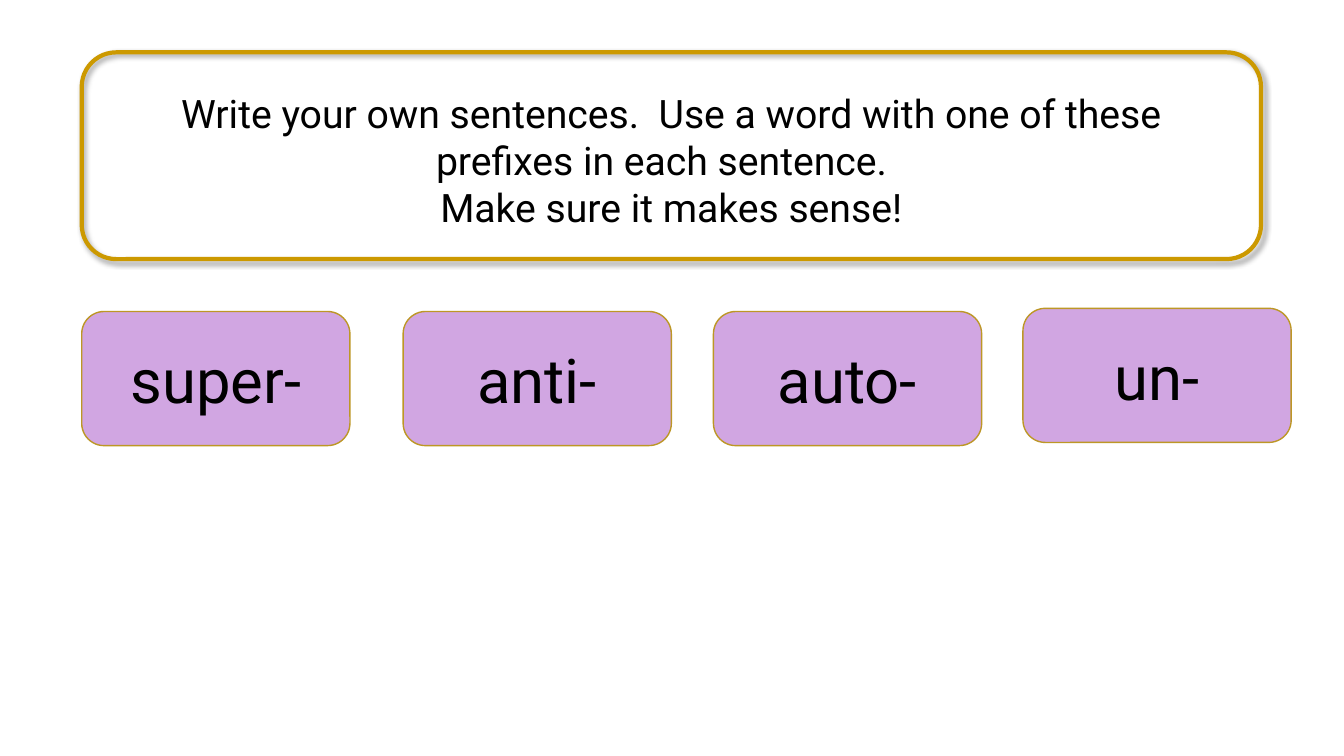
from lxml import etree
from pptx import Presentation
from pptx.dml.color import RGBColor
from pptx.enum import shapes, text
from pptx.util import Cm, Pt

NS = "http://schemas.openxmlformats.org/drawingml/2006/main"


def paint(color, code):
    color.rgb = RGBColor.from_string(code)


def write(frame, lines, size, anchor):
    form = {"word_wrap": True, "auto_size": text.MSO_AUTO_SIZE.NONE,
            "vertical_anchor": anchor}
    for name, value in form.items():
        setattr(frame, name, value)
    frame.text = "\n".join(lines)
    for para in frame.paragraphs:
        para.alignment = text.PP_ALIGN.CENTER
        for name, value in {"name": "Roboto", "size": Pt(size)}.items():
            setattr(para.font, name, value)
        paint(para.font.color, "000000")


deck = Presentation()
deck.slide_width, deck.slide_height = Cm(33.87), Cm(19.05)
slide = deck.slides.add_slide(deck.slide_layouts[5])
box = shapes.MSO_SHAPE.ROUNDED_RECTANGLE

# Instruction in its gold frame
title = slide.shapes.title
place = {"left": 2.64, "top": 2.13, "width": 28.55, "height": 3.84}
for name, value in place.items():
    setattr(title, name, Cm(value))
write(title.text_frame, [
    "Write your own sentences.  Use a word with one of these prefixes in each sentence.  ",
    "Make sure it makes sense!",
], 28, text.MSO_ANCHOR.TOP)

frame = slide.shapes.add_shape(box, Cm(2.06), Cm(1.32), Cm(29.72), Cm(5.21))
frame.fill.background()
paint(frame.line.color, "CC9900")
frame.line.width = Pt(3)
frame.shadow.inherit = False
effects = frame._element.spPr.find(f"{{{NS}}}effectLst")
effects.append(etree.fromstring(
    f'<a:outerShdw xmlns:a="{NS}" blurRad="{Pt(4)}" dist="{Pt(3)}" dir="2700000" '
    'algn="tl" rotWithShape="0"><a:srgbClr val="000000"><a:alpha val="40000"/>'
    '</a:srgbClr></a:outerShdw>'))

# Prefix cards
cards = [("super-", 2.06, 7.85), ("anti-", 10.16, 7.85),
         ("auto-", 17.98, 7.85), ("un-", 25.78, 7.77)]
for prefix, left, top in cards:
    card = slide.shapes.add_shape(box, Cm(left), Cm(top), Cm(6.76), Cm(3.38))
    card.shadow.inherit = False
    card.fill.solid()
    paint(card.fill.fore_color, "D1A6E2")
    paint(card.line.color, "BD9726")
    card.line.width = Pt(1)
    write(card.text_frame, [prefix], 44, text.MSO_ANCHOR.MIDDLE)

deck.save("out.pptx")
